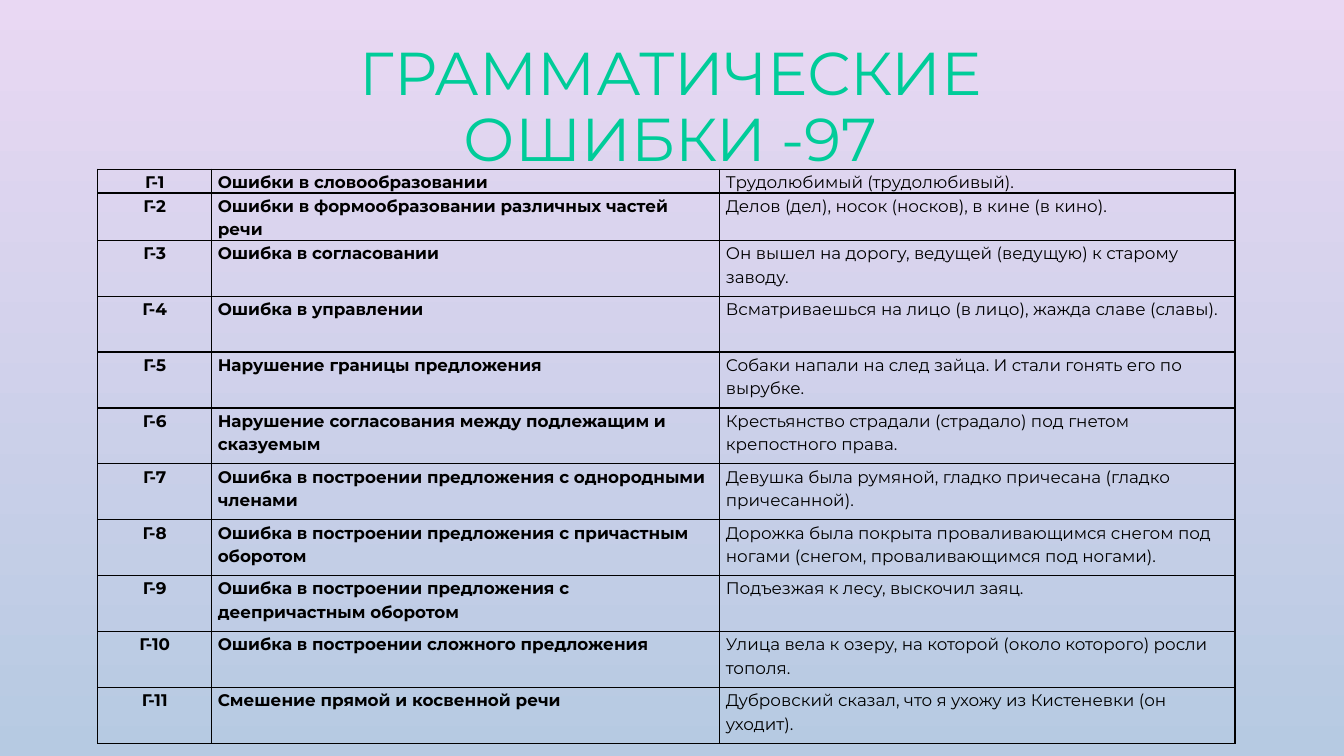
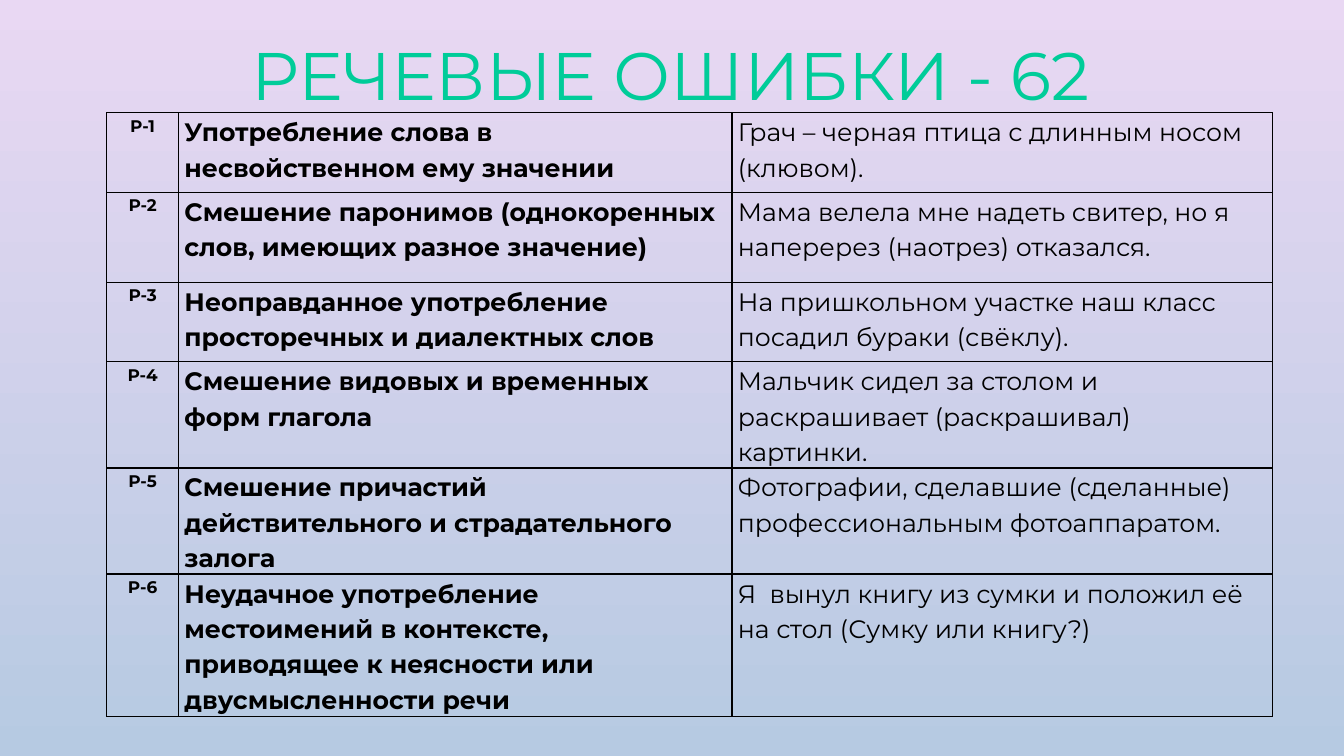
import pptx
import pptx.util
import pptx.dml.color
import pptx.enum.text
import pptx.oxml.ns
import lxml.etree

Inches, Pt = pptx.util.Inches, pptx.util.Pt
RGBColor = pptx.dml.color.RGBColor
PP_ALIGN = pptx.enum.text.PP_ALIGN

FONT = "Montserrat"
LILAC = RGBColor(0xE9, 0xD8, 0xF3)
SKY = RGBColor(0xB6, 0xCA, 0xE2)
GREEN = RGBColor(0x00, 0xCC, 0x99)
BLACK = RGBColor(0x00, 0x00, 0x00)
CODE_SIZE = 12
TITLE_LEFT, TITLE_WIDTH = 1.9, 9.5

# Content: each row holds an error name and an example
GRAMMAR_ROWS = [
    ("Ошибки в словообразовании", "Трудолюбимый (трудолюбивый)."),
    ("Ошибки в формообразовании различных частей речи",
     "Делов (дел), носок (носков), в кине (в кино)."),
    ("Ошибка в согласовании",
     "Он вышел на дорогу, ведущей (ведущую) к старому заводу."),
    ("Ошибка в управлении",
     "Всматриваешься на лицо (в лицо), жажда славе (славы)."),
    ("Нарушение границы предложения",
     "Собаки напали на след зайца. И стали гонять его по вырубке."),
    ("Нарушение согласования между подлежащим и сказуемым",
     "Крестьянство страдали (страдало) под гнетом крепостного права."),
    ("Ошибка в построении предложения с однородными членами",
     "Девушка была румяной, гладко причесана (гладко причесанной)."),
    ("Ошибка в построении предложения с причастным оборотом",
     "Дорожка была покрыта проваливающимся снегом под ногами "
     "(снегом, проваливающимся под ногами)."),
    ("Ошибка в построении предложения с деепричастным оборотом",
     "Подъезжая к лесу, выскочил заяц."),
    ("Ошибка в построении сложного предложения",
     "Улица вела к озеру, на которой (около которого) росли тополя."),
    ("Смешение прямой и косвенной речи",
     "Дубровский сказал, что я ухожу из Кистеневки (он уходит)."),
]
SPEECH_ROWS = [
    ("Употребление слова в несвойственном ему значении",
     "Грач – черная птица с длинным носом (клювом)."),
    ("Смешение паронимов (однокоренных слов, имеющих разное значение)",
     "Мама велела мне надеть свитер, но я наперерез (наотрез) отказался."),
    ("Неоправданное употребление просторечных и диалектных слов",
     "На пришкольном участке наш класс посадил бураки (свёклу)."),
    ("Смешение видовых и временных форм глагола",
     "Мальчик сидел за столом и раскрашивает (раскрашивал) картинки."),
    ("Смешение причастий действительного и страдательного залога",
     "Фотографии, сделавшие (сделанные) профессиональным фотоаппаратом."),
    ("Неудачное употребление местоимений в контексте, приводящее "
     "к неясности или двусмысленности речи",
     "Я  вынул книгу из сумки и положил её на стол (Сумку или книгу?)"),
]
SLIDES = [
    {"title": "ГРАММАТИЧЕСКИЕ ОШИБКИ -97", "title_size": 43.2,
     "title_top": 0.49, "title_height": 1.29,
     "letter": "Г", "rows": GRAMMAR_ROWS, "text_size": 12,
     "left": 0.97, "top": 1.68, "columns": [1.13, 5.04, 5.11],
     "heights": [0.23, 0.47] + [4.99 / 9] * 9},
    {"title": "РЕЧЕВЫЕ ОШИБКИ - 62", "title_size": 48,
     "title_top": 0, "title_height": 1.19,
     "letter": "Р", "rows": SPEECH_ROWS, "text_size": 18,
     "left": 1.06, "top": 1.12, "columns": [0.71, 5.49, 5.36],
     "heights": [0.79, 0.89, 0.79, 1.05, 1.05, 1.41]},
]


def set_background(master):
    fill = master.background.fill
    fill.gradient()
    fill.gradient_angle = 270
    for stop, color in zip(fill.gradient_stops, (LILAC, SKY)):
        stop.color.rgb = color


def style_paragraph(paragraph, size, color, spacing, align, bold=False):
    paragraph.alignment = align
    paragraph.line_spacing = spacing
    font = paragraph.font
    font.name, font.size, font.bold = FONT, Pt(size), bold
    font.color.rgb = color


def add_title(slide, content):
    title = slide.shapes.title
    title.left, title.width = Inches(TITLE_LEFT), Inches(TITLE_WIDTH)
    title.top = Inches(content["title_top"])
    title.height = Inches(content["title_height"])
    frame = title.text_frame
    frame.text = content["title"]
    frame.auto_size = pptx.enum.text.MSO_AUTO_SIZE.NONE
    frame.vertical_anchor = pptx.enum.text.MSO_ANCHOR.BOTTOM
    style_paragraph(frame.paragraphs[0], content["title_size"], GREEN, 0.9,
                    PP_ALIGN.CENTER)


def set_borders(cell):
    qn = pptx.oxml.ns.qn
    properties = cell._tc.get_or_add_tcPr()
    for side in ("a:lnL", "a:lnR", "a:lnT", "a:lnB"):
        line = lxml.etree.SubElement(properties, qn(side), w=str(Pt(1)))
        fill = lxml.etree.SubElement(line, qn("a:solidFill"))
        lxml.etree.SubElement(fill, qn("a:srgbClr"), val=str(BLACK))


def fill_cell(cell, text, size, align, bold):
    cell.margin_left = cell.margin_right = Inches(0.06)
    cell.margin_top = cell.margin_bottom = 0
    set_borders(cell)
    cell.fill.background()
    cell.text = text
    style_paragraph(cell.text_frame.paragraphs[0], size, BLACK, 1.15,
                    align, bold)


def add_error_table(slide, content):
    columns, heights = content["columns"], content["heights"]
    table = slide.shapes.add_table(
        len(heights), len(columns),
        Inches(content["left"]), Inches(content["top"]),
        Inches(sum(columns)), Inches(sum(heights))).table
    table.first_row = table.horz_banding = False
    for column, width in zip(table.columns, columns):
        column.width = Inches(width)
    for row, height in zip(table.rows, heights):
        row.height = Inches(height)

    size = content["text_size"]
    for index, (name, example) in enumerate(content["rows"]):
        code = f"{content['letter']}-{index + 1}"
        fill_cell(table.cell(index, 0), code, CODE_SIZE, PP_ALIGN.CENTER, True)
        fill_cell(table.cell(index, 1), name, size, PP_ALIGN.LEFT, True)
        fill_cell(table.cell(index, 2), example, size, PP_ALIGN.LEFT, False)


def main():
    presentation = pptx.Presentation()
    presentation.slide_width = Inches(13.33)
    presentation.slide_height = Inches(7.5)
    set_background(presentation.slide_master)
    title_only = presentation.slide_layouts.get_by_name("Title Only")
    for content in SLIDES:
        slide = presentation.slides.add_slide(title_only)
        add_title(slide, content)
        add_error_table(slide, content)
    presentation.save("out.pptx")


if __name__ == "__main__":
    main()
